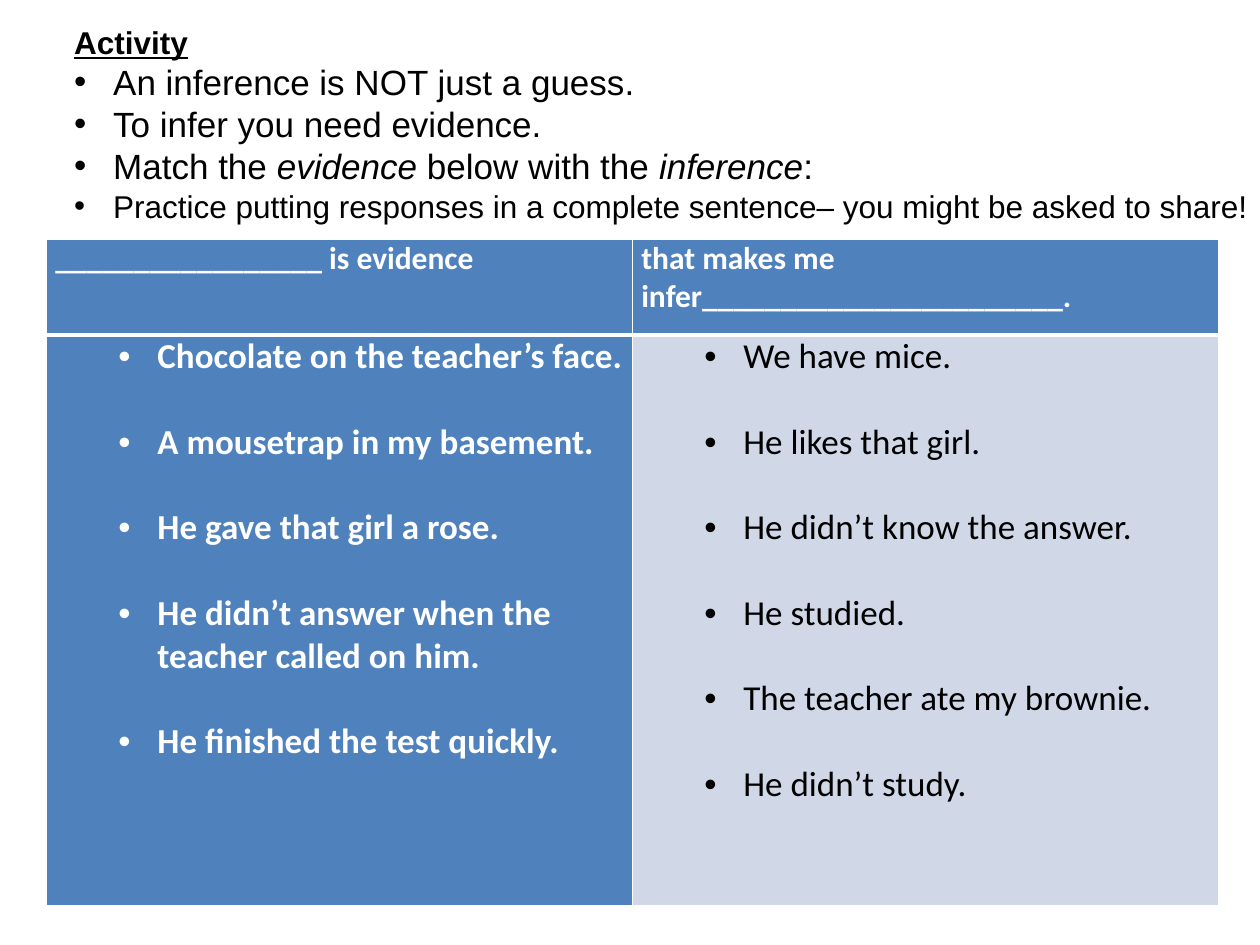
import pptx
import pptx.dml.color
import pptx.enum.text
import pptx.oxml.ns
import pptx.util
from lxml import etree
from pptx.util import Inches, Pt

COLORS = {"white": "FFFFFF", "black": "000000", "blue": "4F81BD", "pale": "D0D8E8"}

EVIDENCE = [
    "Chocolate on the teacher’s face.",
    "A mousetrap in my basement.",
    "He gave that girl a rose.",
    "He didn’t answer when the teacher called on him.",
    "He finished the test quickly.",
]
INFERENCES = [
    "We have mice.",
    "He likes that girl.",
    "He didn’t know the answer.",
    "He studied.",
    "The teacher ate my brownie.",
    "He didn’t study.",
]
# Each reminder is a size and its runs; every second run is italic.
REMINDERS = [
    (20, ["An inference is NOT just a guess."]),
    (20, ["To infer you need evidence."]),
    (20, ["Match the ", "evidence", " below with the ", "inference", ":"]),
    (18, ["Practice putting responses in a complete sentence– you might be asked to share!"]),
]


def rgb(name):
    return pptx.dml.color.RGBColor.from_string(COLORS[name])


def add_child(parent, tag, **attributes):
    return etree.SubElement(parent, pptx.oxml.ns.qn(tag), **attributes)


def add_bullet(paragraph, left):
    """Give the paragraph a round bullet that hangs 0.31 inches before its text."""
    properties = paragraph._p.get_or_add_pPr()
    properties.set("marL", str(Inches(left)))
    properties.set("indent", str(Inches(-0.31)))
    add_child(properties, "a:buFont", typeface="Arial")
    add_child(properties, "a:buChar", char="•")


def set_font(paragraph, name, size, color, bold=False):
    font = paragraph.font
    font.name, font.size, font.bold = name, Pt(size), bold
    font.color.rgb = rgb(color)


def add_border(cell, side, width):
    line = add_child(cell._tc.get_or_add_tcPr(), f"a:ln{side}", w=str(Pt(width)))
    add_child(add_child(line, "a:solidFill"), "a:srgbClr", val=COLORS["white"])


def fill_cell(cell, lines, size, fill, color, bold, bottom=1, bulleted=False):
    cell.margin_left = cell.margin_right = Inches(0.07)
    cell.margin_top = cell.margin_bottom = 0
    for side, width in zip("LRTB", (1, 1, 1, bottom)):
        add_border(cell, side, width)
    cell.fill.solid()
    cell.fill.fore_color.rgb = rgb(fill)
    for index, line in enumerate(lines):
        paragraph = cell.text_frame.paragraphs[0] if index == 0 else cell.text_frame.add_paragraph()
        if index:
            paragraph.space_before = Pt(24.4)
        if bulleted:
            add_bullet(paragraph, 0.81)
        set_font(paragraph, "Calibri", size, color, bold)
        paragraph.add_run().text = line


def add_matching_table(slide):
    table = slide.shapes.add_table(
        2, 2, Inches(0.37), Inches(1.9), Inches(9.3), Inches(5.29)).table
    table.rows[0].height, table.rows[1].height = Inches(0.76), Inches(4.53)
    headings = ["_________________ is evidence", "that makes me infer_______________________."]
    for column, heading in enumerate(headings):
        table.columns[column].width = Inches(4.65)
        fill_cell(table.cell(0, column), [heading], 18, "blue", "white", True, bottom=3)
    fill_cell(table.cell(1, 0), EVIDENCE, 20, "blue", "white", True, bulleted=True)
    fill_cell(table.cell(1, 1), INFERENCES, 20, "pale", "black", False, bulleted=True)


def add_instructions(slide):
    box = slide.shapes.add_textbox(Inches(0.49), Inches(0.12), Inches(12.36), Inches(1.72))
    frame = box.text_frame
    frame.word_wrap = True
    frame.auto_size = pptx.enum.text.MSO_AUTO_SIZE.SHAPE_TO_FIT_TEXT
    frame.vertical_anchor = pptx.enum.text.MSO_ANCHOR.MIDDLE
    title = frame.paragraphs[0]
    set_font(title, "Arial", 18, "black", True)
    title.font.underline = True
    title.add_run().text = "Activity"
    for size, parts in REMINDERS:
        paragraph = frame.add_paragraph()
        add_bullet(paragraph, 0.31)
        set_font(paragraph, "Arial", size, "black")
        for index, part in enumerate(parts):
            run = paragraph.add_run()
            run.text = part
            if index % 2:
                run.font.italic = True


def main():
    presentation = pptx.Presentation()
    presentation.slide_width, presentation.slide_height = Inches(10), Inches(7.5)
    slide = presentation.slides.add_slide(presentation.slide_layouts[6])
    add_matching_table(slide)
    add_instructions(slide)
    presentation.save("out.pptx")


if __name__ == "__main__":
    main()
